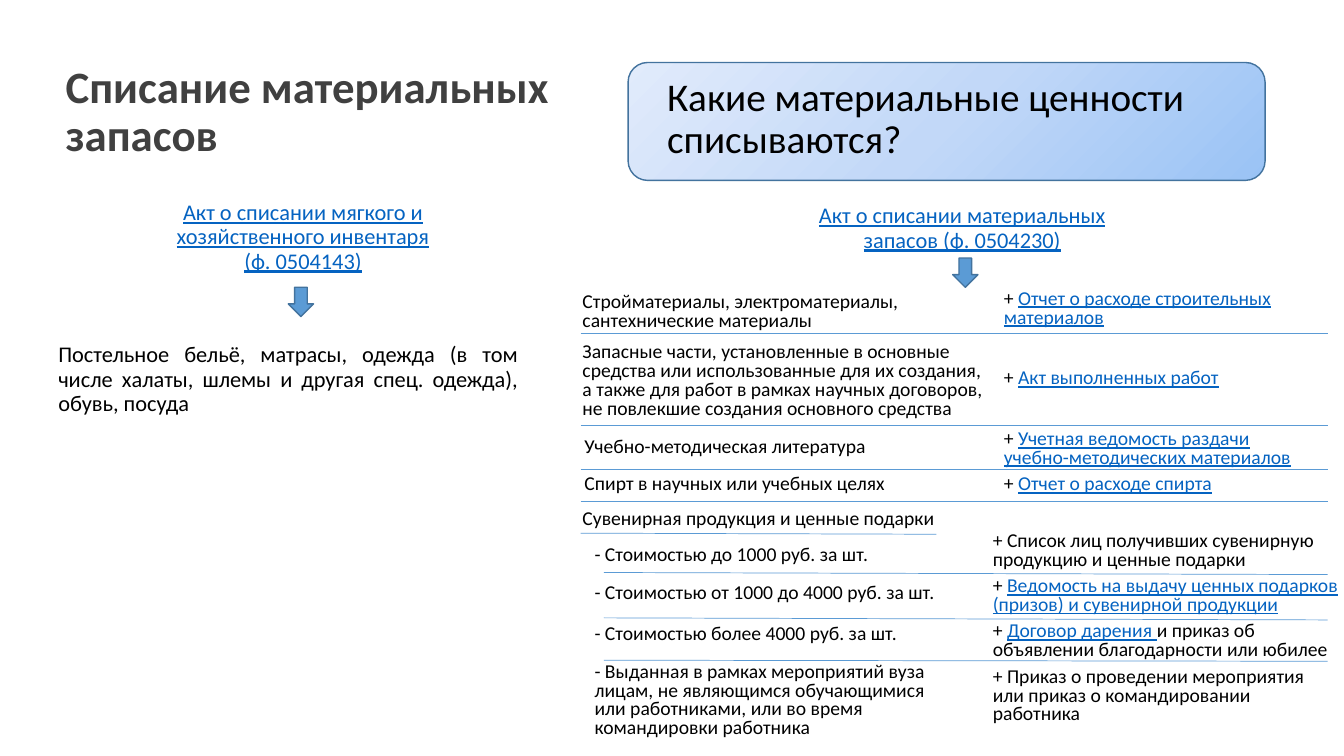
import lxml.etree
import pptx
import pptx.dml.color
import pptx.enum.shapes
import pptx.enum.text
import pptx.oxml
import pptx.oxml.ns
import pptx.util

RGBColor = pptx.dml.color.RGBColor
ALIGN = pptx.enum.text.PP_ALIGN
SHAPE = pptx.enum.shapes.MSO_SHAPE
qn = pptx.oxml.ns.qn

BLACK = RGBColor(0x00, 0x00, 0x00)
HEADING = RGBColor(0x40, 0x40, 0x40)
LINK = RGBColor(0x05, 0x63, 0xC1)
BLUE = RGBColor(0x5B, 0x9B, 0xD5)
OUTLINE = RGBColor(0x43, 0x73, 0x9E)
CARD_STOPS = (
    (0, RGBColor(0x9A, 0xC3, 0xF5)),
    (50, RGBColor(0xC2, 0xD8, 0xF8)),
    (100, RGBColor(0xE1, 0xEB, 0xFB)),
)
FONT = "Calibri"
WIDTH = pptx.util.Inches(13.33)
HEIGHT = pptx.util.Inches(7.5)

MATERIAL_X, GIFT_X = 42.6, 43.5
DOCUMENT_X, GIFT_DOCUMENT_X = 73.95, 73.13

# Each entry: left %, top %, width %, line count, line spacing, plain and linked segments in turn
ENTRIES = (
    (MATERIAL_X, 38.13, 26.03, 2, 0.8, ("Стройматериалы, электроматериалы, сантехнические материалы",)),
    (MATERIAL_X, 44.8, 31.73, 4, 0.8, (
        "Запасные части, установленные в основные средства или использованные для их создания, "
        "а также для работ в рамках научных договоров, не повлекшие создания основного средства",)),
    (MATERIAL_X + 0.15, 56.8, 26.03, 1, 1, ("Учебно-методическая литература",)),
    (MATERIAL_X + 0.15, 61.6, 26.03, 1, 1, ("Спирт в научных или учебных целях",)),
    (MATERIAL_X, 66.27, 28.13, 1, 1, ("Сувенирная продукция и ценные подарки",)),
    (GIFT_X, 71.07, 26.03, 1, 1, ("- Стоимостью до 1000 руб. за шт.",)),
    (GIFT_X, 76, 29.25, 1, 1, ("- Стоимостью от 1000 до 4000 руб. за шт.",)),
    (GIFT_X, 81.47, 26.03, 1, 1, ("- Стоимостью более 4000 руб. за шт.",)),
    (GIFT_X, 87.07, 28.05, 4, 0.8, (
        "- Выданная в рамках мероприятий вуза лицам, не являющимся обучающимися "
        "или работниками, или во время командировки работника",)),
    (DOCUMENT_X, 37.73, 26.78, 2, 0.8, ("+ ", "Отчет о расходе строительных материалов")),
    (DOCUMENT_X, 48.27, 26.78, 1, 0.8, ("+ ", "Акт выполненных работ")),
    (DOCUMENT_X, 56.27, 24.23, 2, 0.8, ("+ ", "Учетная ведомость раздачи учебно-методических материалов")),
    (DOCUMENT_X, 62.27, 26.78, 1, 0.8, ("+ ", "Отчет о расходе спирта")),
    (GIFT_DOCUMENT_X, 69.73, 26.78, 2, 0.8, ("+ Список лиц получивших сувенирную продукцию и ценные подарки",)),
    (GIFT_DOCUMENT_X, 75.73, 28.95, 2, 0.8, (
        "+ ", "Ведомость на выдачу ценных подарков (призов) и сувенирной продукции")),
    (GIFT_DOCUMENT_X, 81.73, 26.78, 2, 0.8, (
        "+ ", "Договор дарения ", "и приказ об объявлении благодарности или юбилее")),
    (GIFT_DOCUMENT_X, 87.73, 25.65, 3, 0.8, (
        "+ Приказ о проведении мероприятия или приказ о командировании работника",)),
)

RULES = (
    (43.2, 44.13, 98.78, 44.13),
    (43.2, 56.27, 98.78, 56.27),
    (43.2, 62.13, 98.78, 62.13),
    (43.2, 66.27, 98.78, 66.27),
    (43.2, 70.53, 69.68, 70.67),
    (44.93, 75.73, 98.78, 76),
    (44.93, 81.73, 98.78, 82),
    (44.93, 87.33, 98.78, 87.47),
)


def across(percent):
    return round(WIDTH * percent / 100)


def down(percent):
    return round(HEIGHT * percent / 100)


def area(left, top, width, height):
    return across(left), down(top), across(width), down(height)


def style(paragraph, size, color=BLACK, spacing=0.9, before=0):
    paragraph.line_spacing = spacing
    paragraph.space_before = pptx.util.Pt(before)
    paragraph.font.name = FONT
    paragraph.font.size = pptx.util.Pt(size)
    paragraph.font.color.rgb = color


def add_text(slide, box, text, size, color=BLACK, align=ALIGN.LEFT, spacing=0.9, before=10):
    frame = slide.shapes.add_textbox(*area(*box)).text_frame
    frame.word_wrap = True
    paragraph = frame.paragraphs[0]
    paragraph.text = text
    paragraph.alignment = align
    style(paragraph, size, color, spacing, before)
    return frame


def add_form(slide, box, text):
    frame = add_text(slide, box, text, 16, LINK, ALIGN.CENTER)
    frame.paragraphs[0].font.underline = True


def add_entry(slide, left, top, width, lines, spacing, segments):
    height = 4.53 if spacing == 1 else 1.33 + 2.53 * lines
    frame = add_text(slide, (left, top, width, height), "", 14, spacing=spacing, before=0)
    frame.auto_size = pptx.enum.text.MSO_AUTO_SIZE.SHAPE_TO_FIT_TEXT
    for position, segment in enumerate(segments):
        run = frame.paragraphs[0].add_run()
        run.text = segment
        if position % 2:
            run.font.color.rgb = LINK
            run.font.underline = True


def add_outlined(slide, kind, box):
    shape = slide.shapes.add_shape(kind, *area(*box))
    shape.shadow.inherit = False
    shape.line.color.rgb = OUTLINE
    shape.line.width = pptx.util.Pt(1)
    return shape


def add_arrow(slide, left, top):
    arrow = add_outlined(slide, SHAPE.DOWN_ARROW, (left, top, 1.88, 3.87))
    arrow.fill.solid()
    arrow.fill.fore_color.rgb = BLUE


def add_card(slide, box):
    card = add_outlined(slide, SHAPE.ROUNDED_RECTANGLE, box)
    card.fill.gradient()
    card.fill.gradient_angle = 135
    stops = card.fill._fill._gradFill.find(qn("a:gsLst"))
    for stop in list(stops):
        stops.remove(stop)
    for share, color in CARD_STOPS:
        stop = lxml.etree.SubElement(stops, qn("a:gs"), pos=str(share * 1000))
        lxml.etree.SubElement(stop, qn("a:srgbClr"), val=str(color))


def add_rule(slide, left, top, right, bottom):
    rule = slide.shapes.add_connector(
        pptx.enum.shapes.MSO_CONNECTOR.STRAIGHT,
        across(left), down(top), across(right), down(bottom))
    rule.line.color.rgb = BLUE
    rule.line.width = pptx.util.Pt(0.5)
    lxml.etree.SubElement(rule._element.spPr, qn("a:effectLst"))


def set_title(slide, box, text):
    title = slide.shapes.title
    title.left, title.top, title.width, title.height = area(*box)
    title.text_frame.text = text
    title.text_frame.vertical_anchor = pptx.enum.text.MSO_ANCHOR.BOTTOM
    paragraph = title.text_frame.paragraphs[0]
    paragraph.alignment = ALIGN.LEFT
    style(paragraph, 32, HEADING)
    paragraph.font.bold = True


def main():
    deck = pptx.Presentation()
    deck.slide_width, deck.slide_height = WIDTH, HEIGHT
    slide = deck.slides.add_slide(deck.slide_layouts.get_by_name("Title Only"))

    set_title(slide, (4.13, 7.2, 39.5, 14.8), "Списание материальных запасов")
    add_text(slide, (3.6, 44.8, 35.7, 9.73),
             "Постельное бельё, матрасы, одежда (в том числе халаты, шлемы и другая спец. одежда), "
             "обувь, посуда", 16, align=ALIGN.JUSTIFY)
    add_form(slide, (57.45, 26.4, 28.28, 10.4), "Акт о списании материальных запасов (ф. 0504230)")
    add_form(slide, (8.63, 26, 27.83, 11.2),
             "Акт о списании мягкого и хозяйственного инвентаря\v(ф. 0504143)")
    for entry in ENTRIES:
        add_entry(slide, *entry)
    for rule in RULES:
        add_rule(slide, *rule)
    add_arrow(slide, 21.45, 38)
    add_arrow(slide, 70.88, 34.13)
    add_card(slide, (46.73, 8.27, 47.4, 15.6))
    add_text(slide, (48.9, 9.6, 41.55, 12.93), "Какие материальные ценности списываются?", 28)
    deck.save("out.pptx")


if __name__ == "__main__":
    main()
